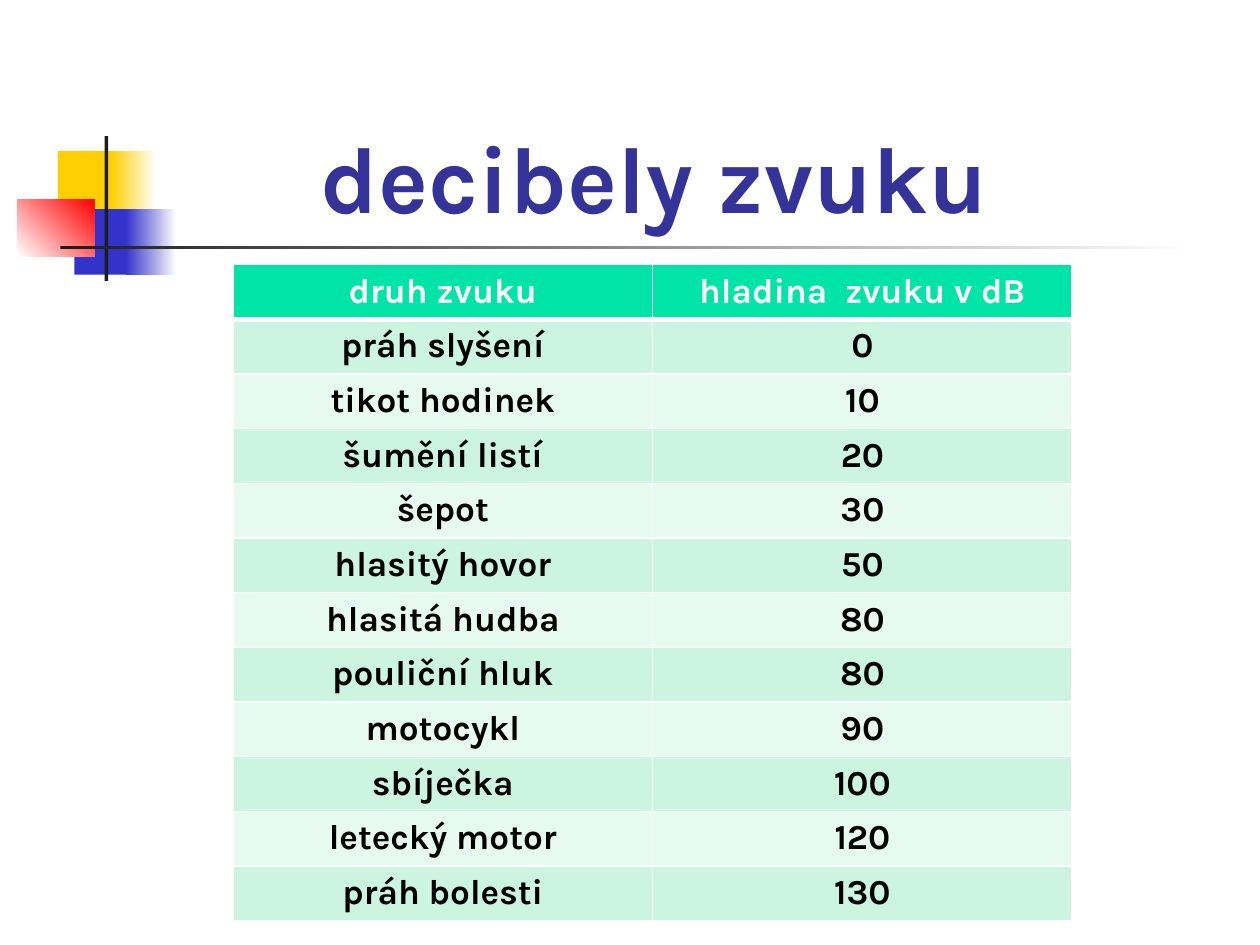
from lxml.etree import SubElement
from pptx import Presentation
from pptx.dml.color import RGBColor
from pptx.enum.shapes import MSO_SHAPE
from pptx.enum.text import MSO_ANCHOR, PP_ALIGN
from pptx.oxml.ns import qn
from pptx.util import Inches, Pt

FONT = "Karla"
WHITE = RGBColor(0xFF, 0xFF, 0xFF)
BLACK = RGBColor(0x00, 0x00, 0x00)
YELLOW = RGBColor(0xFF, 0xCF, 0x01)
BLUE = RGBColor(0x33, 0x33, 0xCC)
RED = RGBColor(0xFF, 0x00, 0x00)
CHARCOAL = RGBColor(0x1C, 0x1C, 0x1C)
TITLE_BLUE = RGBColor(0x33, 0x33, 0x99)
HEADER_GREEN = RGBColor(0x00, 0xE4, 0xA8)
BAND_DARK = RGBColor(0xCC, 0xF5, 0xE1)
BAND_LIGHT = RGBColor(0xE7, 0xFA, 0xF1)

SOUND_LEVELS = [
    ("druh zvuku", "hladina  zvuku v dB"),
    ("práh slyšení", "0"),
    ("tikot hodinek", "10"),
    ("šumění listí", "20"),
    ("šepot", "30"),
    ("hlasitý hovor", "50"),
    ("hlasitá hudba", "80"),
    ("pouliční hluk", "80"),
    ("motocykl", "90"),
    ("sbíječka", "100"),
    ("letecký motor", "120"),
    ("práh bolesti", "130"),
]


def add_block(slide, left, top, width, height, start, end=None, angle=0):
    shape = slide.shapes.add_shape(
        MSO_SHAPE.RECTANGLE, Inches(left), Inches(top), Inches(width), Inches(height)
    )
    shape.shadow.inherit = False
    shape.line.fill.background()
    if end is None:
        shape.fill.solid()
        shape.fill.fore_color.rgb = start
    else:
        shape.fill.gradient()
        shape.fill.gradient_angle = angle
        for stop, color in zip(shape.fill.gradient_stops, (start, end)):
            stop.color.rgb = color


def add_ornament(slide):
    add_block(slide, 0.46, 1.2, 0.48, 0.52, YELLOW)
    add_block(slide, 0.88, 1.2, 0.36, 0.52, YELLOW, WHITE)
    add_block(slide, 0.59, 1.66, 0.46, 0.52, BLUE)
    add_block(slide, 1, 1.66, 0.4, 0.52, BLUE, WHITE)
    add_block(slide, 0.14, 1.58, 0.61, 0.46, WHITE, RED, angle=45)
    add_block(slide, 0.83, 1.08, 0.03, 1.15, CHARCOAL)
    add_block(slide, 0.48, 1.95, 9, 0.03, CHARCOAL, WHITE)


def write_text(text_frame, text, size, color):
    text_frame.text = text
    paragraph = text_frame.paragraphs[0]
    paragraph.alignment = PP_ALIGN.CENTER
    font = paragraph.runs[0].font
    font.name = FONT
    font.size = Pt(size)
    font.bold = True
    font.color.rgb = color


def add_title(slide, text):
    box = slide.shapes.add_textbox(Inches(0.75), Inches(0.29), Inches(8.88), Inches(1.6))
    box.text_frame.word_wrap = True
    box.text_frame.vertical_anchor = MSO_ANCHOR.BOTTOM
    write_text(box.text_frame, text, 54, TITLE_BLUE)


def set_borders(cell, top, bottom):
    properties = cell._tc.get_or_add_tcPr()
    for side, width in (("L", 1), ("R", 1), ("T", top), ("B", bottom)):
        line = SubElement(properties, qn(f"a:ln{side}"), w=str(Pt(width)))
        fill = SubElement(line, qn("a:solidFill"))
        SubElement(fill, qn("a:srgbClr"), val=str(WHITE))


def style_cell(cell, text, row):
    set_borders(cell, top=3 if row == 1 else 1, bottom=3 if row == 0 else 1)
    cell.fill.solid()
    if row == 0:
        cell.fill.fore_color.rgb = HEADER_GREEN
    else:
        cell.fill.fore_color.rgb = BAND_DARK if row % 2 else BAND_LIGHT
    write_text(cell.text_frame, text, 20, BLACK if row else WHITE)


def add_sound_table(slide, records):
    row_height = Inches(0.41)
    table = slide.shapes.add_table(
        len(records), 2, Inches(1.85), Inches(2.1), Inches(6.66), row_height * len(records)
    ).table
    for row, record in enumerate(records):
        table.rows[row].height = row_height
        for column, text in enumerate(record):
            style_cell(table.cell(row, column), text, row)


def main():
    presentation = Presentation()
    presentation.slide_width = Inches(10)
    presentation.slide_height = Inches(7.5)
    slide = presentation.slides.add_slide(presentation.slide_layouts[6])
    add_ornament(slide)
    add_title(slide, "decibely zvuku")
    add_sound_table(slide, SOUND_LEVELS)
    presentation.save("out.pptx")


if __name__ == "__main__":
    main()
